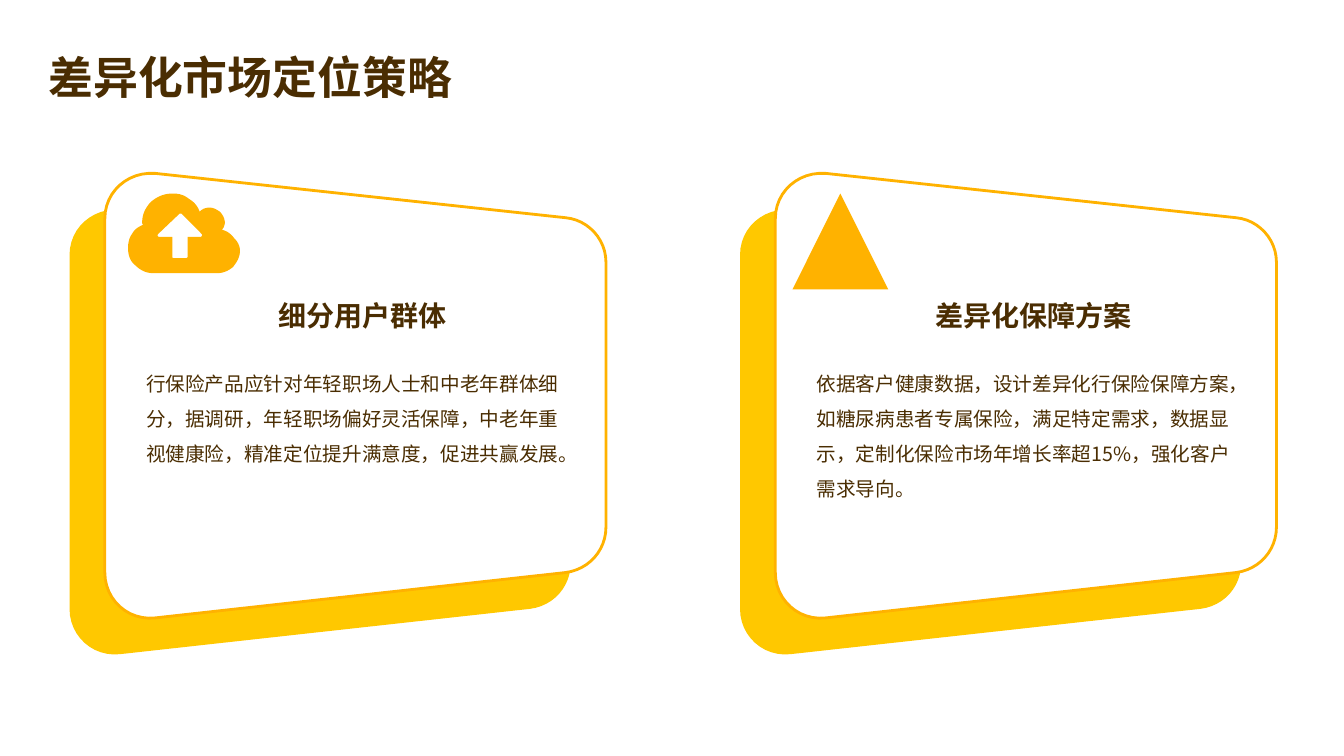
import dataclasses

import pptx
import pptx.dml.color
import pptx.enum.shapes
import pptx.enum.text
import pptx.oxml
import pptx.oxml.ns
import pptx.util

Inches = pptx.util.Inches
ALIGN = pptx.enum.text.PP_ALIGN
ANCHOR = pptx.enum.text.MSO_ANCHOR


@dataclasses.dataclass(frozen=True)
class Theme:
    font: str = "Noto Sans CJK SC"
    text: str = "4A2D02"
    back: str = "FFC800"
    accent: str = "FFB200"
    paper: str = "FFFFFF"
    title_size: int = 32
    heading_size: int = 20
    body_size: int = 14
    outline_width: int = 2


CARD_OUTLINE = [[
    (0.5, 0), (4.57, 0.44), (4.79, 0.46, 4.97, 0.65, 4.97, 0.88),
    (4.97, 3.51), (4.97, 3.74, 4.8, 3.93, 4.57, 3.96),
    (0.5, 4.41), (0.23, 4.44, 0, 4.23, 0, 3.96),
    (0, 0.45), (0, 0.18, 0.23, -0.02, 0.5, 0),
]]
CLOUD_OUTLINE = [
    [
        (0.44, 0), (0.5, 0, 0.55, 0.01, 0.6, 0.05), (0.65, 0.08, 0.69, 0.12, 0.71, 0.18),
        (0.74, 0.15, 0.77, 0.14, 0.81, 0.14), (0.85, 0.14, 0.88, 0.16, 0.91, 0.18),
        (0.94, 0.21, 0.96, 0.25, 0.96, 0.29), (0.96, 0.31, 0.95, 0.34, 0.93, 0.36),
        (0.98, 0.37, 1.02, 0.4, 1.05, 0.44), (1.09, 0.48, 1.11, 0.52, 1.11, 0.57),
        (1.11, 0.63, 1.08, 0.68, 1.04, 0.73), (0.99, 0.77, 0.94, 0.79, 0.88, 0.79),
        (0.25, 0.79), (0.18, 0.79, 0.12, 0.76, 0.07, 0.71),
        (0.02, 0.67, 0, 0.61, 0, 0.54), (0, 0.49, 0.01, 0.44, 0.04, 0.4),
        (0.06, 0.36, 0.1, 0.33, 0.15, 0.31), (0.14, 0.3, 0.14, 0.29, 0.14, 0.29),
        (0.14, 0.21, 0.17, 0.14, 0.23, 0.08), (0.29, 0.03, 0.36, 0, 0.44, 0),
    ],
    [
        (0.51, 0.2), (0.3, 0.4), (0.29, 0.41, 0.29, 0.43, 0.31, 0.43),
        (0.44, 0.43), (0.44, 0.63), (0.44, 0.64, 0.45, 0.64, 0.46, 0.64),
        (0.57, 0.64), (0.58, 0.64, 0.59, 0.64, 0.59, 0.63), (0.59, 0.43),
        (0.72, 0.43), (0.73, 0.43, 0.74, 0.41, 0.73, 0.4), (0.53, 0.2),
        (0.52, 0.2, 0.52, 0.2, 0.51, 0.2),
    ],
]


def flatten(contour, steps=12):
    points = [contour[0]]
    for segment in contour[1:]:
        if len(segment) == 2:
            points.append(segment)
            continue
        start = points[-1]
        controls = [start, segment[:2], segment[2:4], segment[4:]]
        for step in range(1, steps + 1):
            t = step / steps
            weights = ((1 - t) ** 3, 3 * t * (1 - t) ** 2, 3 * t * t * (1 - t), t ** 3)
            points.append(tuple(
                sum(weight * control[axis] for weight, control in zip(weights, controls))
                for axis in (0, 1)
            ))
    return [(Inches(x), Inches(y)) for x, y in points]


class SlideBuilder:
    def __init__(self, slide, theme):
        self.slide = slide
        self.theme = theme

    def paint(self, shape, fill, line=None):
        shape.shadow.inherit = False
        shape.fill.solid()
        shape.fill.fore_color.rgb = pptx.dml.color.RGBColor.from_string(fill)
        if line:
            shape.line.color.rgb = pptx.dml.color.RGBColor.from_string(line)
            shape.line.width = pptx.util.Pt(self.theme.outline_width)
        else:
            shape.line.fill.background()

    def outline(self, contours, left, top, fill, line=None):
        first, *others = [flatten(contour) for contour in contours]
        builder = self.slide.shapes.build_freeform(*first[0])
        builder.add_line_segments(first[1:], close=True)
        for points in others:
            builder.move_to(*points[0])
            builder.add_line_segments(points[1:], close=True)
        self.paint(builder.convert_to_shape(Inches(left), Inches(top)), fill, line)

    def triangle(self, left, top, width, height):
        shape = self.slide.shapes.add_shape(
            pptx.enum.shapes.MSO_SHAPE.ISOSCELES_TRIANGLE,
            Inches(left), Inches(top), Inches(width), Inches(height))
        self.paint(shape, self.theme.accent)

    def set_text(self, shape, text, size, bold=False, align=ALIGN.LEFT,
                 anchor=ANCHOR.TOP, line_spacing=1.0, gap=0):
        frame = shape.text_frame
        frame.text = text
        frame.word_wrap = True
        frame.auto_size = pptx.enum.text.MSO_AUTO_SIZE.NONE
        frame.vertical_anchor = anchor
        paragraph = frame.paragraphs[0]
        paragraph.alignment = align
        paragraph.line_spacing = line_spacing
        paragraph.space_before = paragraph.space_after = pptx.util.Pt(gap)
        font = paragraph.font
        font.size = pptx.util.Pt(size)
        font.bold = bold
        font.name = self.theme.font
        font.color.rgb = pptx.dml.color.RGBColor.from_string(self.theme.text)
        east_asian = pptx.oxml.parse_xml(
            f'<a:ea {pptx.oxml.ns.nsdecls("a")} typeface="{self.theme.font}"/>')
        paragraph._p.pPr.find(pptx.oxml.ns.qn("a:defRPr")).append(east_asian)

    def title(self, text, left, top, width, height):
        shape = self.slide.shapes.title
        shape.left, shape.top = Inches(left), Inches(top)
        shape.width, shape.height = Inches(width), Inches(height)
        self.set_text(shape, text, self.theme.title_size, bold=True,
                      anchor=ANCHOR.MIDDLE, line_spacing=1.2)

    def textbox(self, text, left, top, width, height, size, **style):
        shape = self.slide.shapes.add_textbox(
            Inches(left), Inches(top), Inches(width), Inches(height))
        self.set_text(shape, text, size, **style)

    def card(self, left, top, heading, body):
        theme = self.theme
        self.outline(CARD_OUTLINE, left - 0.35, top + 0.36, theme.back)
        self.outline(CARD_OUTLINE, left, top, theme.paper, theme.accent)
        self.textbox(heading, left + 1.08, top + 1.18, 2.96, 0.45, theme.heading_size,
                     bold=True, align=ALIGN.CENTER, anchor=ANCHOR.MIDDLE)
        self.textbox(body, left + 0.31, top + 1.8, 4.38, 1.89, theme.body_size,
                     line_spacing=1.5, gap=3)


def main():
    presentation = pptx.Presentation()
    presentation.slide_width = Inches(13.33)
    presentation.slide_height = Inches(7.5)
    theme = Theme()
    slide = presentation.slides.add_slide(presentation.slide_layouts[5])
    builder = SlideBuilder(slide, theme)

    builder.title("差异化市场定位策略", 0.38, 0.31, 12.57, 0.79)
    cards = [
        ("细分用户群体",
         "行保险产品应针对年轻职场人士和中老年群体细分，据调研，年轻职场偏好灵活保障，"
         "中老年重视健康险，精准定位提升满意度，促进共赢发展。"),
        ("差异化保障方案",
         "依据客户健康数据，设计差异化行保险保障方案，如糖尿病患者专属保险，满足特定需求，"
         "数据显示，定制化保险市场年增长率超15%，强化客户需求导向。"),
    ]
    for index, (heading, body) in enumerate(cards):
        builder.card(1.04 + 6.65 * index, 1.72, heading, body)
    builder.outline(CLOUD_OUTLINE, 1.27, 1.92, theme.accent)
    builder.triangle(7.86, 1.92, 0.95, 0.95)

    presentation.save("out.pptx")


if __name__ == "__main__":
    main()
